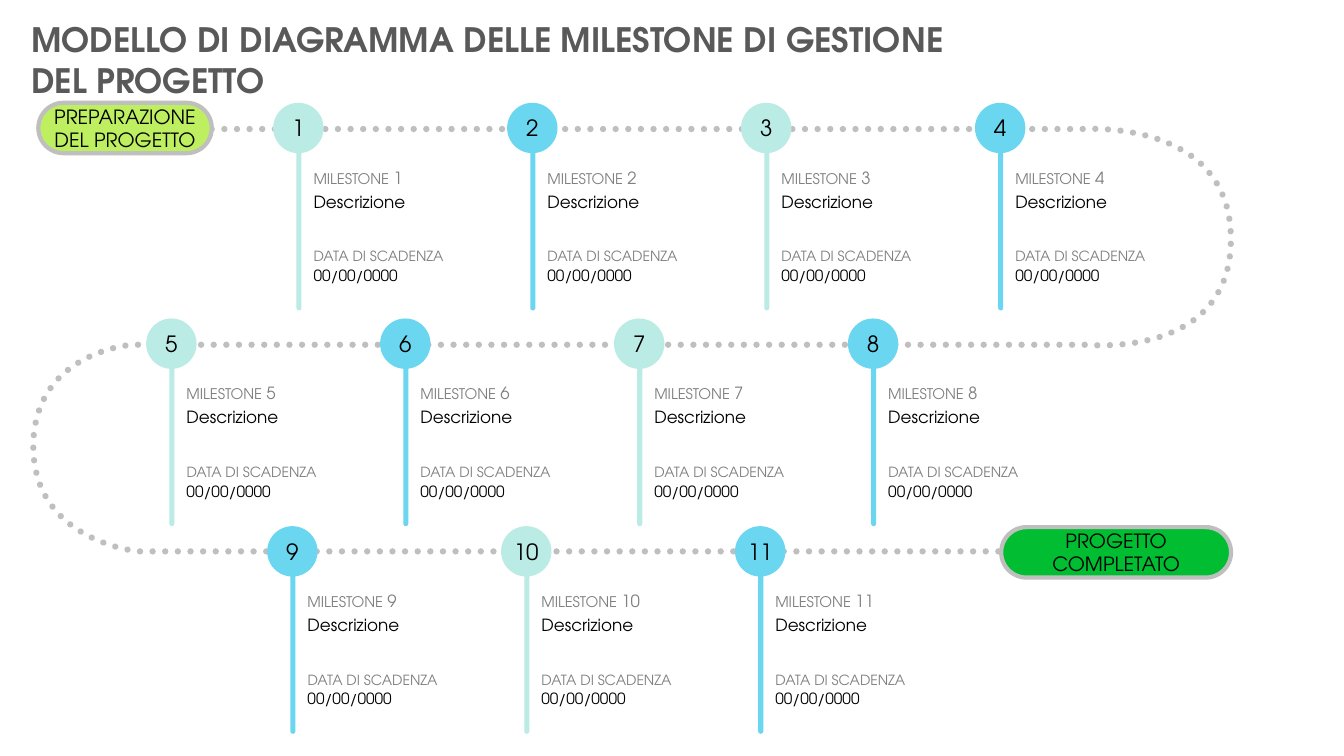
from pptx import Presentation
from pptx.dml.color import RGBColor
from pptx.enum.dml import MSO_LINE
from pptx.enum.shapes import MSO_SHAPE
from pptx.enum.text import MSO_ANCHOR, MSO_AUTO_SIZE, PP_ALIGN
from pptx.util import Inches, Pt

FONT = "TeX Gyre Adventor"
BLACK = RGBColor(0x00, 0x00, 0x00)
DARK = RGBColor(0x59, 0x59, 0x59)
GRAY = RGBColor(0x80, 0x80, 0x80)
TRACK = RGBColor(0xBF, 0xBF, 0xBF)
MINT = RGBColor(0xBB, 0xEB, 0xE5)
BLUE = RGBColor(0x6B, 0xD6, 0xF0)
LIME = RGBColor(0xBE, 0xEF, 0x60)
GREEN = RGBColor(0x00, 0xBD, 0x32)


def write(sp, *runs, color=BLACK, bold=False, inset=0, align=None,
          anchor=MSO_ANCHOR.TOP, after=None):
    """Fill a shape with one paragraph of (text, size) runs."""
    tf = sp.text_frame
    tf.word_wrap = True
    tf.vertical_anchor = anchor
    if inset is not None:
        tf.margin_left = tf.margin_right = tf.margin_top = tf.margin_bottom = inset
    p = tf.paragraphs[0]
    p.alignment = align
    p.space_after = after
    for text, size in runs:
        r = p.add_run()
        r.text = text
        r.font.name = FONT
        r.font.size = Pt(size)
        r.font.bold = bold
        r.font.color.rgb = color


def add_block(shapes, kind, x, y, w, h, fill, text=None, size=14, outline=None):
    sp = shapes.add_shape(kind, Inches(x), Inches(y), Inches(w), Inches(h))
    sp.shadow.inherit = False
    sp.fill.solid()
    sp.fill.fore_color.rgb = fill
    if kind == MSO_SHAPE.ROUNDED_RECTANGLE:
        sp.adjustments[0] = 0.5
    if outline:
        sp.line.color.rgb = outline
        sp.line.width = Pt(3)
    else:
        sp.line.fill.background()
    if text:
        write(sp, (text, size), align=PP_ALIGN.CENTER, anchor=MSO_ANCHOR.MIDDLE)


prs = Presentation()
prs.slide_width, prs.slide_height = Inches(13.33), Inches(7.5)
s = prs.slides.add_slide(prs.slide_layouts[6])

title = s.shapes.add_textbox(Inches(0.21), Inches(0.14), Inches(9.71), Inches(0.91))
write(title, ("MODELLO DI DIAGRAMMA DELLE MILESTONE DI GESTIONE DEL PROGETTO", 24),
      color=DARK, bold=True, inset=None)
title.text_frame.auto_size = MSO_AUTO_SIZE.SHAPE_TO_FIT_TEXT

# Winding track: each bend is a pair of cubic curves, sampled into short segments
bends = [
    [(10.73, 1.28), (10.73, 1.28), (12.21, 1.17), (12.21, 2.37)],
    [(12.21, 2.37), (12.21, 3.57), (10.78, 3.42), (10.78, 3.42)],
    [(1.31, 3.42), (1.31, 3.42), (0.33, 3.49), (0.33, 4.43)],
    [(0.33, 4.43), (0.33, 5.37), (1.37, 5.47), (1.37, 5.47)],
]
STEPS = 24
points = []
for bend in bends:
    for i in range(STEPS + 1):
        t = i / STEPS
        weights = ((1 - t) ** 3, 3 * t * (1 - t) ** 2, 3 * t ** 2 * (1 - t), t ** 3)
        points.append(tuple(Inches(sum(k * c for k, c in zip(weights, axis)))
                            for axis in zip(*bend)))
points.append((Inches(10.28), Inches(5.47)))
builder = s.shapes.build_freeform(Inches(2.1), Inches(1.28))
builder.add_line_segments(points, close=False)
track = builder.convert_to_shape()
track.shadow.inherit = False
track.fill.background()
track.line.color.rgb = TRACK
track.line.width = Pt(4.5)
track.line.dash_style = MSO_LINE.ROUND_DOT
track.line._get_or_add_ln().set("cap", "rnd")

add_block(s.shapes, MSO_SHAPE.ROUNDED_RECTANGLE, 0.38, 1.02, 1.72, 0.5, LIME,
          "PREPARAZIONE DEL PROGETTO", outline=TRACK)

# Rows: left and top of the first circle, milestone numbers, alternating colours
PITCH = 2.32
rows = [
    (2.71, 1.02, range(1, 5), (MINT, BLUE)),
    (1.45, 3.16, range(5, 9), (MINT, BLUE)),
    (2.65, 5.22, range(9, 12), (BLUE, MINT)),
]
for left, y, numbers, colors in rows:
    for col, number in enumerate(numbers):
        x = left + col * PITCH
        color = colors[col % 2]
        shapes = s.shapes.add_group_shape().shapes
        add_block(shapes, MSO_SHAPE.ROUNDED_RECTANGLE, x + 0.23, y + 0.19, 0.05, 1.87, color)
        labels = [
            (0.64, 1.17, 0.26, GRAY, None,
             [("MILESTONE", 10.5), (" ", 11), (str(number), 12)]),
            (0.88, 1.37, 0.57, BLACK, None, [("Descrizione", 12)]),
            (1.44, 1.45, 0.18, GRAY, Pt(3), [("DATA DI SCADENZA", 10)]),
            (1.62, 0.9, 0.26, BLACK, None, [("00/00/0000", 11)]),
        ]
        for dy, w, h, ink, after, runs in labels:
            box = shapes.add_textbox(Inches(x + 0.4), Inches(y + dy), Inches(w), Inches(h))
            write(box, *runs, color=ink, after=after)
        add_block(shapes, MSO_SHAPE.OVAL, x, y, 0.5, 0.5, color, str(number), 16)

add_block(s.shapes, MSO_SHAPE.ROUNDED_RECTANGLE, 9.93, 5.23, 2.28, 0.5, GREEN,
          "PROGETTO COMPLETATO", outline=TRACK)

prs.save("out.pptx")
